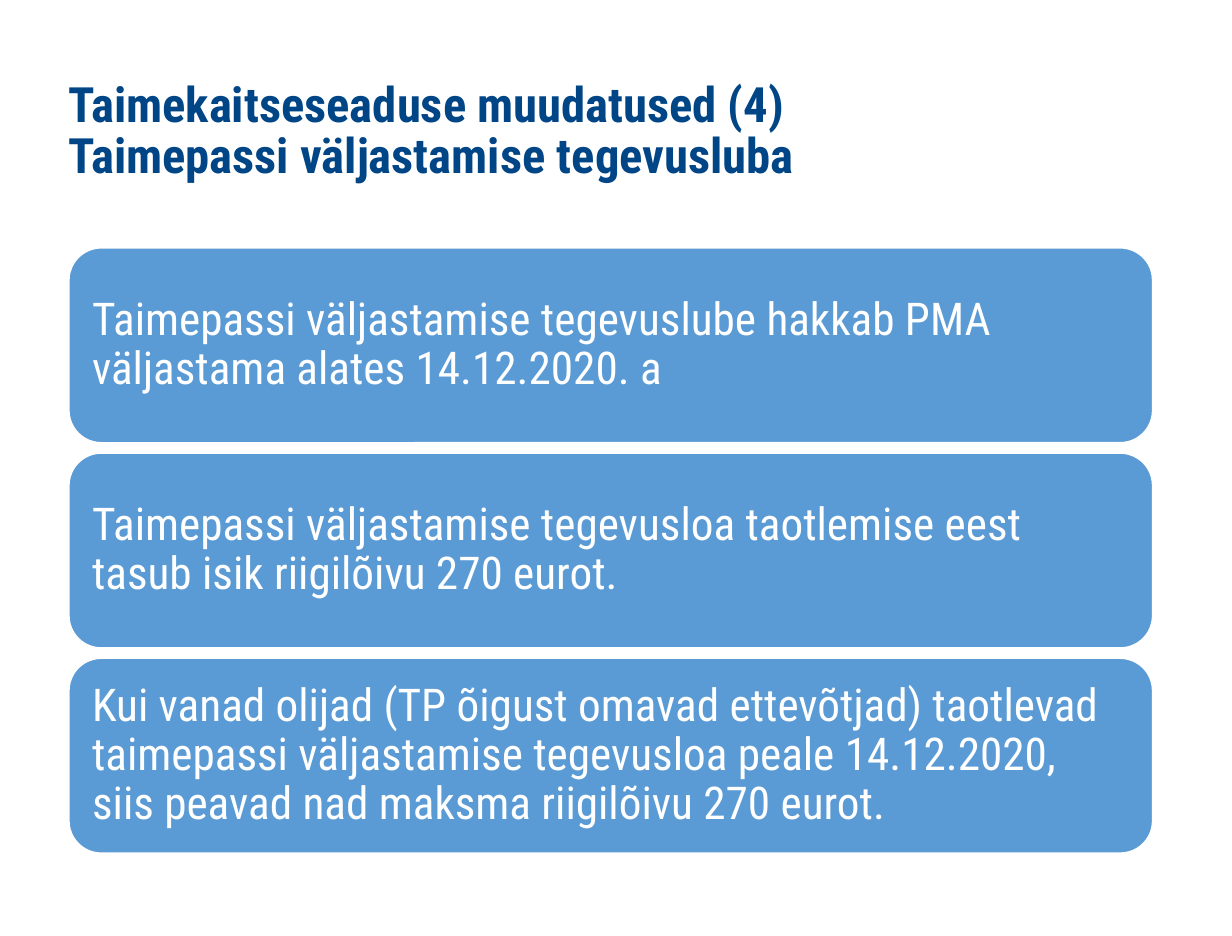
from dataclasses import dataclass

from pptx import Presentation
from pptx.dml.color import RGBColor
from pptx.enum.shapes import MSO_SHAPE
from pptx.enum.text import MSO_ANCHOR, PP_ALIGN
from pptx.slide import Slide
from pptx.text.text import TextFrame
from pptx.util import Inches, Pt

ROUNDED = MSO_SHAPE.ROUNDED_RECTANGLE
TOP, MIDDLE = MSO_ANCHOR.TOP, MSO_ANCHOR.MIDDLE
LEFT = PP_ALIGN.LEFT

FONT = "Roboto Condensed"
NAVY, BLUE, WHITE = "004586", "5B9BD5", "FFFFFF"

# The page measures 25 by 19 cm
CM_PER_INCH = 2.54
PAGE_WIDTH, PAGE_HEIGHT = 25 / CM_PER_INCH, 19 / CM_PER_INCH
MARGIN, CONTENT_WIDTH = 0.55, 8.66
CARD_TOP, CARD_HEIGHT, CARD_GAP = 1.98, 1.56, 0.08


@dataclass
class TextStyle:
    size: float
    color: str
    bold: bool
    line_spacing: float
    anchor: MSO_ANCHOR
    insets: tuple[float, float, float, float]  # left, top, right, bottom


TITLE_STYLE = TextStyle(28, NAVY, True, 0.88, TOP, (0, 0.06, 0, 0))
CARD_STYLE = TextStyle(26, WHITE, False, 0.9, MIDDLE, (0.11, 0.11, 0.11, 0.11))

TITLE = "Taimekaitseseaduse muudatused (4)\nTaimepassi väljastamise tegevusluba"
CARDS = [
    "Taimepassi väljastamise tegevuslube hakkab PMA väljastama alates 14.12.2020. a",
    "Taimepassi väljastamise tegevusloa taotlemise eest tasub isik riigilõivu 270 eurot.",
    "Kui vanad olijad (TP õigust omavad ettevõtjad) taotlevad taimepassi väljastamise "
    "tegevusloa peale 14.12.2020, siis peavad nad maksma riigilõivu 270 eurot.",
]


def rgb(value: str) -> RGBColor:
    return RGBColor.from_string(value)


def write(frame: TextFrame, text: str, style: TextStyle) -> None:
    left, top, right, bottom = style.insets
    frame.margin_left, frame.margin_top = Inches(left), Inches(top)
    frame.margin_right, frame.margin_bottom = Inches(right), Inches(bottom)
    frame.word_wrap = True
    frame.vertical_anchor = style.anchor
    para = frame.paragraphs[0]
    para.text = text
    para.alignment = LEFT
    para.line_spacing = style.line_spacing
    for span in para.runs:
        span.font.name = FONT
        span.font.size = Pt(style.size)
        span.font.bold = style.bold
        span.font.color.rgb = rgb(style.color)


def add_title(page: Slide, text: str) -> None:
    box = page.shapes.add_textbox(
        Inches(MARGIN), Inches(0.59), Inches(CONTENT_WIDTH), Inches(1.18))
    write(box.text_frame, text, TITLE_STYLE)


def add_card(page: Slide, top: float, text: str) -> None:
    card = page.shapes.add_shape(
        ROUNDED, Inches(MARGIN), Inches(top), Inches(CONTENT_WIDTH), Inches(CARD_HEIGHT))
    card.shadow.inherit = False
    card.fill.solid()
    card.fill.fore_color.rgb = rgb(BLUE)
    card.line.color.rgb = rgb(WHITE)
    card.line.width = Pt(1)
    write(card.text_frame, text, CARD_STYLE)


def main() -> None:
    deck = Presentation()
    deck.slide_width, deck.slide_height = Inches(PAGE_WIDTH), Inches(PAGE_HEIGHT)
    page = deck.slides.add_slide(deck.slide_layouts[6])

    # Heading
    add_title(page, TITLE)

    # Stacked cards
    for index, text in enumerate(CARDS):
        add_card(page, CARD_TOP + index * (CARD_HEIGHT + CARD_GAP), text)

    deck.save("out.pptx")


if __name__ == "__main__":
    main()
